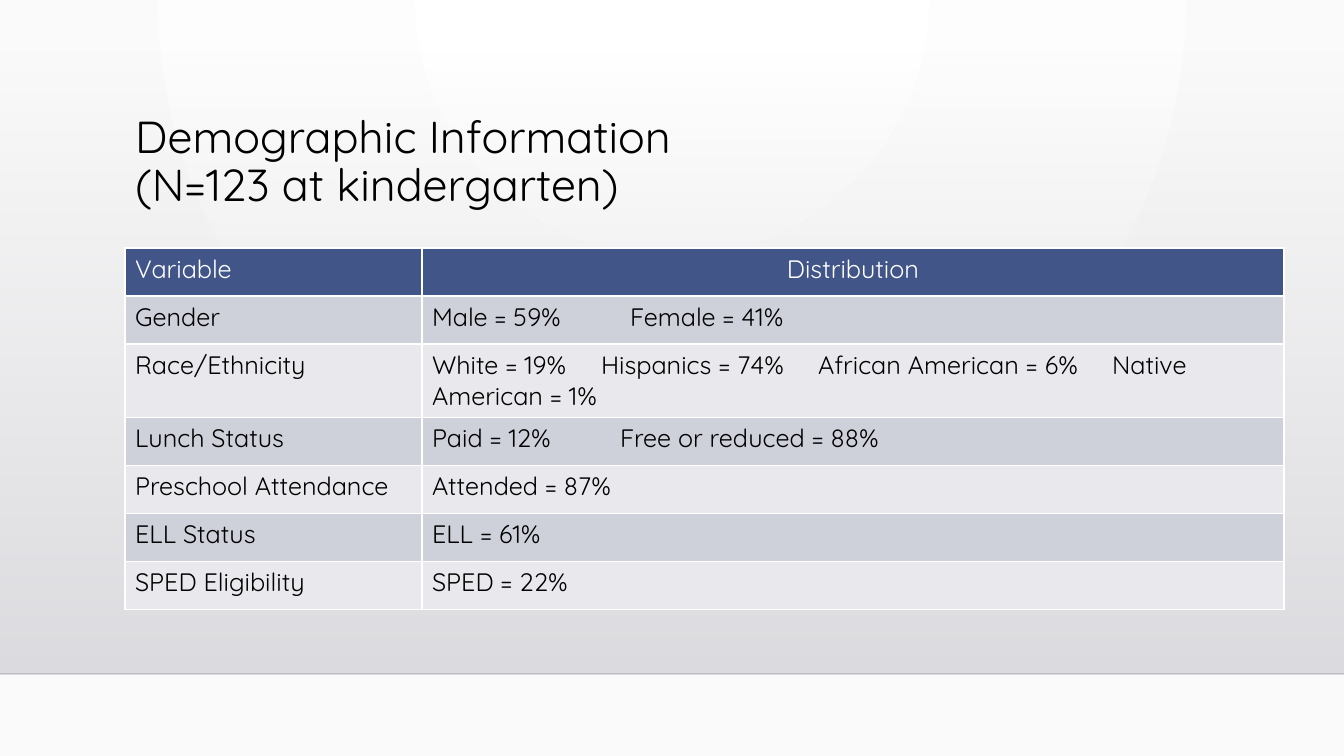
from lxml import etree
from pptx import Presentation
from pptx import util as u
from pptx.dml.color import RGBColor
from pptx.enum import shapes, text
from pptx.oxml import ns

SCALE = 914400 / 100.8
FONT = "Quicksand"
COLORS = {
    "ink": "000000", "white": "FFFFFF", "paper": "FAFAFA",
    "haze": "DCDCE0", "mist": "DEDEE2", "rule": "000001",
    "head": "415588", "dark": "CFD1DA", "light": "E9E9ED",
}
ROWS = [
    ("Variable", "Distribution", ()),
    ("Gender", "Male = 59%\tFemale = 41%", (198,)),
    ("Race/Ethnicity",
     "White = 19%\tHispanics = 74%\tAfrican American = 6%\tNative American = 1%",
     (169, 386, 680)),
    ("Lunch Status", "Paid = 12%\tFree or reduced = 88%", (188,)),
    ("Preschool Attendance", "Attended = 87%", ()),
    ("ELL Status", "ELL = 61%", ()),
    ("SPED Eligibility", "SPED = 22%", ()),
]


def px(n):
    return u.Emu(round(n * SCALE))


def color(name):
    return RGBColor.from_string(COLORS[name])


def sub(node, tag, **attrs):
    return etree.SubElement(node, ns.qn(tag), attrs)


def blend(fill, owner, stops):
    fill.solid()
    old = owner.find(ns.qn("a:solidFill"))
    grad = etree.Element(ns.qn("a:gradFill"), rotWithShape="1")
    items = sub(grad, "a:gsLst")
    for place, name, alpha in stops:
        stop = sub(items, "a:gs", pos=str(place * 1000))
        tint = sub(stop, "a:srgbClr", val=COLORS[name])
        if alpha < 100:
            sub(tint, "a:alpha", val=str(alpha * 1000))
    owner.replace(old, grad)
    return grad


def style(par, size, name):
    for run in par.runs:
        run.font.name = FONT
        run.font.size = u.Pt(size)
        run.font.bold = False
        run.font.color.rgb = color(name)


def add_back(slide):
    fill = slide.background.fill
    fill.solid()
    owner = slide._element.find(".//" + ns.qn("p:bgPr"))
    grad = blend(fill, owner, [(0, "white", 100), (100, "paper", 100)])
    ring = sub(grad, "a:path", path="circle")
    sub(ring, "a:fillToRect", l="43000", t="0", r="43000", b="100000")


def add_shade(slide):
    shade = slide.shapes.add_shape(
        shapes.MSO_SHAPE.RECTANGLE, 0, px(51), px(1344), px(623))
    shade.shadow.inherit = False
    shade.line.fill.background()
    grad = blend(shade.fill, shade._element.spPr,
                 [(0, "haze", 0), (100, "mist", 100)])
    sub(grad, "a:lin", ang="5400000", scaled="0")
    slide.shapes._spTree.insert(2, shade._element)


def add_rule(slide):
    rule = slide.shapes.add_connector(
        shapes.MSO_CONNECTOR.STRAIGHT, 0, px(674), px(1344), px(674))
    rule.line.width = u.Pt(1)
    rule.line.color.rgb = color("rule")
    tint = rule._element.spPr.find(".//" + ns.qn("a:srgbClr"))
    sub(tint, "a:alpha", val="20000")
    sub(rule._element.spPr, "a:effectLst")


def add_title(slide):
    title = slide.shapes.title
    title.left, title.top = px(125), px(105)
    title.width, title.height = px(1058), px(116)
    frame = title.text_frame
    frame.text = "Demographic Information\v(N=123 at kindergarten)"
    frame.vertical_anchor = text.MSO_ANCHOR.MIDDLE
    par = frame.paragraphs[0]
    par.alignment = text.PP_ALIGN.LEFT
    par.line_spacing = 0.9
    style(par, 32, "ink")


def set_cell(cell, words, stops, fill, ink):
    cell.fill.solid()
    cell.fill.fore_color.rgb = color(fill)
    par = cell.text_frame.paragraphs[0]
    par.text = words
    if stops:
        tabs = sub(par._p.get_or_add_pPr(), "a:tabLst")
        for stop in stops:
            sub(tabs, "a:tab", pos=str(px(stop)), algn="l")
    style(par, 18, ink)


def add_grid(slide):
    grid = slide.shapes.add_table(
        len(ROWS), 2, px(125), px(248), px(1159), px(361)).table
    for col, width in zip(grid.columns, (297, 862)):
        col.width = px(width)
    for i, (label, words, stops) in enumerate(ROWS):
        grid.rows[i].height = px(73 if len(stops) > 1 else 48)
        fill = "head" if i == 0 else ("light", "dark")[i % 2]
        ink = "white" if i == 0 else "ink"
        set_cell(grid.cell(i, 0), label, (), fill, ink)
        set_cell(grid.cell(i, 1), words, stops, fill, ink)
    head = grid.cell(0, 1).text_frame.paragraphs[0]
    head.alignment = text.PP_ALIGN.CENTER


def main():
    deck = Presentation()
    deck.slide_width, deck.slide_height = px(1344), px(756)
    slide = deck.slides.add_slide(deck.slide_layouts[5])
    add_back(slide)
    add_shade(slide)
    add_rule(slide)
    add_title(slide)
    add_grid(slide)
    deck.save("out.pptx")


if __name__ == "__main__":
    main()
